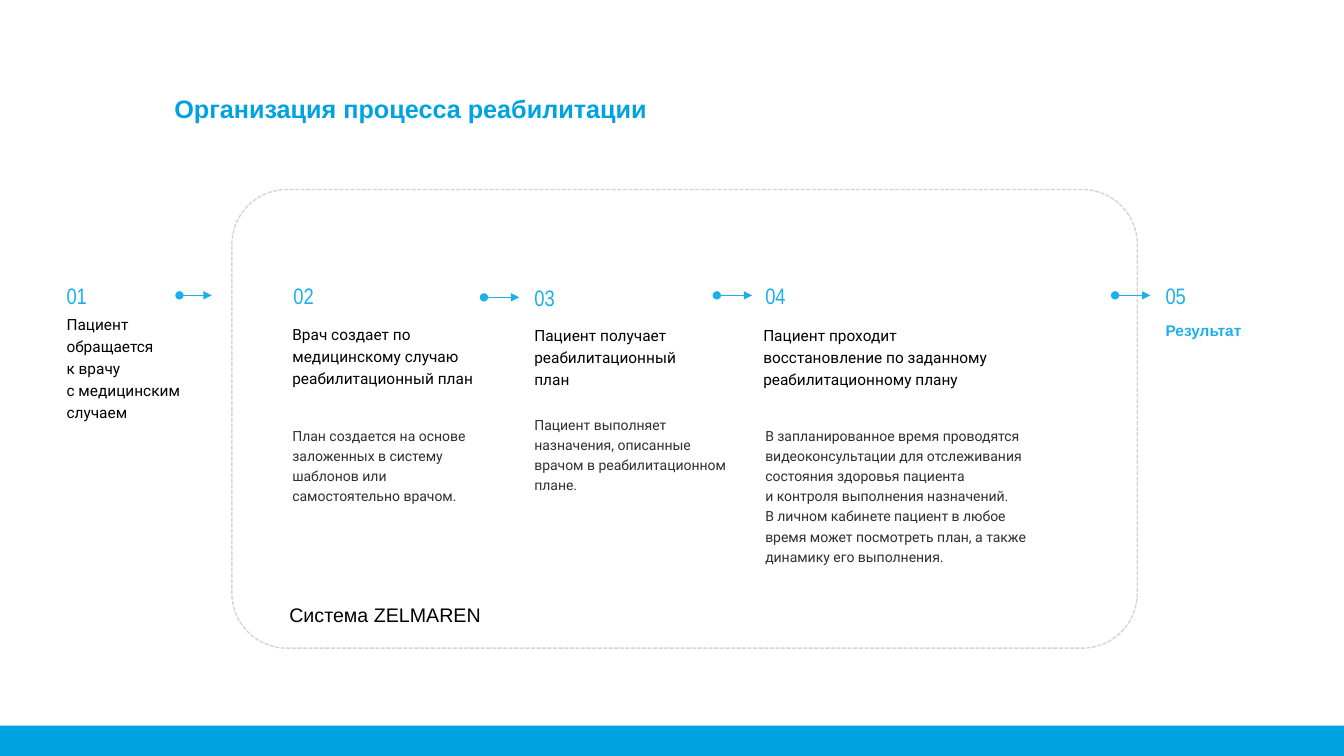
"""Build the rehabilitation process slide."""
from dataclasses import dataclass

from lxml import etree
from pptx import Presentation
from pptx.dml.color import RGBColor
from pptx.enum.dml import MSO_LINE
from pptx.enum.shapes import MSO_CONNECTOR, MSO_SHAPE
from pptx.enum.text import MSO_ANCHOR, MSO_AUTO_SIZE
from pptx.oxml.ns import qn
from pptx.shapes.autoshape import Shape
from pptx.slide import Slide
from pptx.util import Inches, Pt

RECTANGLE = MSO_SHAPE.RECTANGLE
ROUNDED_RECTANGLE = MSO_SHAPE.ROUNDED_RECTANGLE
STRAIGHT = MSO_CONNECTOR.STRAIGHT
SHORT_DASH = MSO_LINE.SQUARE_DOT
MIDDLE = MSO_ANCHOR.MIDDLE
TOP = MSO_ANCHOR.TOP
GROW = MSO_AUTO_SIZE.SHAPE_TO_FIT_TEXT
FIXED = MSO_AUTO_SIZE.NONE

SLIDE_WIDTH, SLIDE_HEIGHT = 13.33, 7.5
FOOTER_HEIGHT = 0.3
NUMBER_TOP, HEADING_TOP, DETAIL_TOP = 2.76, 3.15, 4.16


@dataclass(frozen=True)
class Theme:
    """Colours, fonts and type sizes of the slide."""

    brand: RGBColor = RGBColor(0x00, 0xA3, 0xE1)
    accent: RGBColor = RGBColor(0x1D, 0xAF, 0xEC)
    frame: RGBColor = RGBColor(0xD6, 0xD5, 0xD5)
    text: RGBColor = RGBColor(0x00, 0x00, 0x00)
    detail: RGBColor = RGBColor(0x2F, 0x2F, 0x2F)
    display_font: str = "Arial"
    number_font: str = "Arial Narrow"
    body_font: str = "Roboto"
    title_size: int = 18
    number_size: int = 16
    caption_size: int = 14
    heading_size: int = 11
    detail_size: int = 10
    line_width: int = 1


THEME = Theme()


@dataclass(frozen=True)
class Box:
    """Place and size in inches."""

    left: float
    top: float
    width: float
    height: float


@dataclass(frozen=True)
class Step:
    """One numbered step of the process."""

    number: str
    number_left: float
    heading: str
    heading_box: Box
    detail: tuple[str, ...] = ()
    detail_box: Box | None = None
    number_shift: float = 0
    is_result: bool = False


@dataclass(frozen=True)
class Arrow:
    """A horizontal arrow between two steps."""

    start: float
    end: float
    level: float = 2.93


STEPS = (
    Step("01", 0.62, "Пациент обращается\nк врачу\nс медицинским случаем",
         Box(0.62, HEADING_TOP, 1.56, 0.97)),
    Step("02", 2.87, "Врач создает по медицинскому случаю реабилитационный план",
         Box(2.86, HEADING_TOP, 1.97, 0.73),
         ("План создается на основе заложенных в систему шаблонов или "
          "самостоятельно врачом.",),
         Box(2.86, DETAIL_TOP, 1.97, 0.89)),
    Step("03", 5.26, "Пациент получает реабилитационный план",
         Box(5.26, HEADING_TOP, 1.63, 0.75),
         ("Пациент выполняет\nназначения, описанные врачом в реабилитационном плане.",),
         Box(5.26, DETAIL_TOP, 2.13, 0.67), number_shift=0.02),
    Step("04", 7.55,
         "Пациент проходит\nвосстановление по заданному реабилитационному плану",
         Box(7.53, HEADING_TOP, 3.22, 0.75),
         ("В запланированное время проводятся видеоконсультации для отслеживания "
          "состояния здоровья пациента\nи контроля выполнения назначений.",
          "В личном кабинете пациент в любое время может посмотреть план, а также "
          "динамику его выполнения."),
         Box(7.55, DETAIL_TOP, 2.68, 1.49)),
    Step("05", 11.52, "Результат", Box(11.52, HEADING_TOP, 1.63, 0.26), is_result=True),
)

ARROWS = (Arrow(1.78, 2.1), Arrow(4.8, 5.15, 2.95), Arrow(7.11, 7.46), Arrow(11.06, 11.41))


def add_text(slide: Slide, box: Box, *texts: str, size: int, color: RGBColor,
             font: str = THEME.body_font, bold: bool = False, spacing: float = 1.0,
             inset: float = 0.04, anchor: MSO_ANCHOR = MIDDLE,
             auto_size: MSO_AUTO_SIZE = GROW) -> None:
    """Add a text box with one paragraph per text."""
    shape = slide.shapes.add_textbox(
        Inches(box.left), Inches(box.top), Inches(box.width), Inches(box.height))
    frame = shape.text_frame
    frame.word_wrap = True
    frame.auto_size = auto_size
    frame.vertical_anchor = anchor
    frame.margin_left = frame.margin_right = Inches(inset)
    frame.margin_top = frame.margin_bottom = Inches(inset)
    for index, text in enumerate(texts):
        paragraph = frame.add_paragraph() if index else frame.paragraphs[0]
        paragraph.text = text
        paragraph.line_spacing = spacing
        for run in paragraph.runs:
            run.font.name = font
            run.font.size = Pt(size)
            run.font.bold = bold
            run.font.color.rgb = color


def add_panel(slide: Slide, kind: MSO_SHAPE, box: Box) -> Shape:
    """Add a preset shape without a shadow."""
    shape = slide.shapes.add_shape(
        kind, Inches(box.left), Inches(box.top), Inches(box.width), Inches(box.height))
    shape.shadow.inherit = False
    return shape


def add_footer(slide: Slide) -> None:
    """Add the coloured strip along the bottom edge."""
    footer = add_panel(slide, RECTANGLE, Box(
        0, SLIDE_HEIGHT - FOOTER_HEIGHT, SLIDE_WIDTH, FOOTER_HEIGHT))
    footer.fill.solid()
    footer.fill.fore_color.rgb = THEME.brand
    footer.line.fill.background()


def add_system_frame(slide: Slide) -> None:
    """Add the dashed outline around the steps inside the system."""
    frame = add_panel(slide, ROUNDED_RECTANGLE, Box(2.3, 1.88, 8.98, 4.55))
    frame.adjustments[0] = 0.12
    frame.fill.background()
    frame.line.color.rgb = THEME.frame
    frame.line.width = Pt(THEME.line_width)
    frame.line.dash_style = SHORT_DASH


def add_arrow(slide: Slide, arrow: Arrow) -> None:
    """Add an arrow with a round start and a triangular end."""
    level = Inches(arrow.level)
    connector = slide.shapes.add_connector(
        STRAIGHT, Inches(arrow.start), level, Inches(arrow.end), level)
    connector.line.color.rgb = THEME.accent
    connector.line.width = Pt(THEME.line_width)
    properties = connector.element.spPr
    outline = properties.find(qn("a:ln"))
    for tag, kind in (("a:headEnd", "oval"), ("a:tailEnd", "triangle")):
        etree.SubElement(outline, qn(tag), type=kind)
    etree.SubElement(properties, qn("a:effectLst"))


def add_step(slide: Slide, step: Step) -> None:
    """Add the number, heading and detail of a step."""
    add_text(slide, Box(step.number_left, NUMBER_TOP + step.number_shift, 0.38, 0.35),
             step.number, size=THEME.number_size, color=THEME.accent, font=THEME.number_font)
    add_text(slide, step.heading_box, step.heading, size=THEME.heading_size,
             color=THEME.accent if step.is_result else THEME.text,
             font=THEME.display_font if step.is_result else THEME.body_font,
             bold=step.is_result, spacing=1.0 if step.is_result else 1.2)
    if step.detail_box:
        add_text(slide, step.detail_box, *step.detail, size=THEME.detail_size,
                 color=THEME.detail, spacing=1.2)


def main() -> None:
    """Build and save the presentation."""
    presentation = Presentation()
    presentation.slide_width = Inches(SLIDE_WIDTH)
    presentation.slide_height = Inches(SLIDE_HEIGHT)
    slide = presentation.slides.add_slide(presentation.slide_layouts[6])
    add_footer(slide)
    add_system_frame(slide)
    for step in STEPS:
        add_step(slide, step)
    for arrow in ARROWS:
        add_arrow(slide, arrow)
    add_text(slide, Box(1.68, 0.47, 11.65, 0.84), "Организация процесса реабилитации",
             size=THEME.title_size, color=THEME.brand, font=THEME.display_font,
             bold=True, spacing=2.22, inset=0.05, auto_size=FIXED)
    add_text(slide, Box(2.87, 5.98, 3.73, 0.37), "Система ZELMAREN",
             size=THEME.caption_size, color=THEME.text, font=THEME.display_font,
             inset=0, anchor=TOP, auto_size=FIXED)
    presentation.save("out.pptx")


if __name__ == "__main__":
    main()
